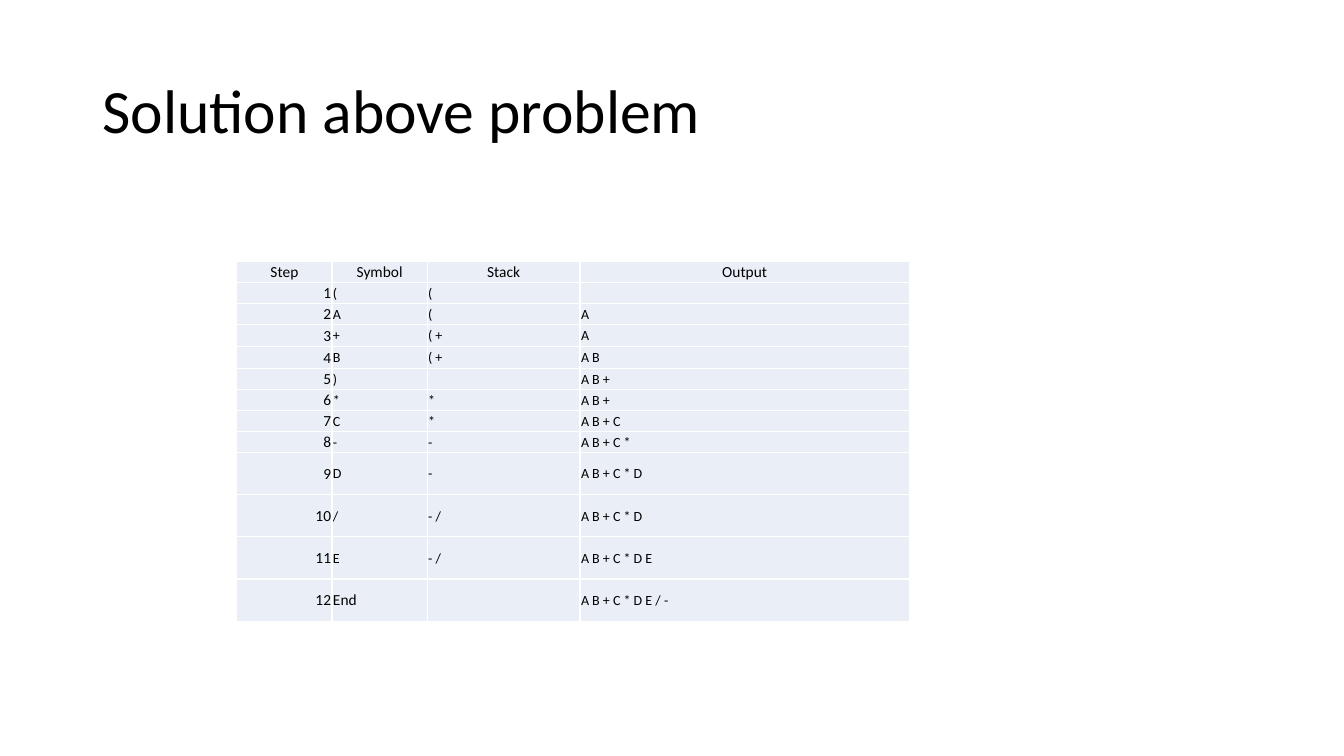
from typing import NamedTuple

from lxml.etree import SubElement
from pptx import Presentation
from pptx.dml.color import RGBColor
from pptx.enum.text import MSO_ANCHOR, MSO_AUTO_SIZE, PP_ALIGN
from pptx.oxml.ns import qn
from pptx.slide import Slide
from pptx.table import _Cell
from pptx.text.text import _Paragraph
from pptx.util import Pt

BLACK = RGBColor(0x00, 0x00, 0x00)
WHITE = RGBColor(0xFF, 0xFF, 0xFF)
PALE_BLUE = RGBColor(0xEA, 0xEF, 0xF7)
FONT = "Calibri"
LABEL_SIZE = 11
TRACE_SIZE = 10


class Step(NamedTuple):
    symbol: str
    stack: str
    output: str


HEADINGS = ("Step", "Symbol", "Stack", "Output")
STEPS = (
    Step("(", "(", ""),
    Step("A", "(", "A"),
    Step("+", "( +", "A"),
    Step("B", "( +", "A B"),
    Step(")", "", "A B +"),
    Step("*", "*", "A B +"),
    Step("C", "*", "A B + C"),
    Step("-", "-", "A B + C *"),
    Step("D", "-", "A B + C * D"),
    Step("/", "- /", "A B + C * D"),
    Step("E", "- /", "A B + C * D E"),
    Step("End", "", "A B + C * D E / -"),
)
COLUMN_WIDTHS = (68, 68, 109.2, 235.2)
ROW_HEIGHTS = (15.05,) * 3 + (15.8,) * 2 + (15.05,) * 4 + (30.1,) * 4


def format_runs(paragraph: _Paragraph, size: float) -> None:
    for run in paragraph.runs:
        run.font.name = FONT
        run.font.size = Pt(size)
        run.font.color.rgb = BLACK


def add_borders(cell: _Cell) -> None:
    properties = cell._tc.get_or_add_tcPr()
    for side in ("a:lnL", "a:lnR", "a:lnT", "a:lnB"):
        line = SubElement(properties, qn(side), w=str(Pt(1)))
        fill = SubElement(line, qn("a:solidFill"))
        SubElement(fill, qn("a:srgbClr"), val=str(WHITE))


def fill_cell(cell: _Cell, text: str, size: float, alignment: PP_ALIGN) -> None:
    add_borders(cell)
    cell.fill.solid()
    cell.fill.fore_color.rgb = PALE_BLUE
    cell.vertical_anchor = MSO_ANCHOR.MIDDLE
    cell.margin_left = cell.margin_right = cell.margin_top = Pt(0.7)
    cell.margin_bottom = Pt(0)
    paragraph = cell.text_frame.paragraphs[0]
    paragraph.alignment = alignment
    if text:
        paragraph.text = text
        format_runs(paragraph, size)
    else:
        # An empty cell would otherwise stretch its row to the default text size.
        SubElement(paragraph._p, qn("a:endParaRPr"), sz=str(size * 100))


def add_title(slide: Slide, text: str) -> None:
    title = slide.shapes.title
    title.left, title.top, title.width, title.height = Pt(66), Pt(28.8), Pt(828), Pt(104.4)
    frame = title.text_frame
    frame.text = text
    frame.word_wrap = True
    frame.auto_size = MSO_AUTO_SIZE.NONE
    frame.vertical_anchor = MSO_ANCHOR.MIDDLE
    paragraph = frame.paragraphs[0]
    paragraph.alignment = PP_ALIGN.LEFT
    paragraph.line_spacing = 0.9
    format_runs(paragraph, 44)


def add_trace_table(slide: Slide) -> None:
    table = slide.shapes.add_table(
        len(STEPS) + 1, len(HEADINGS), Pt(169.2), Pt(186.6),
        Pt(sum(COLUMN_WIDTHS)), Pt(sum(ROW_HEIGHTS)),
    ).table
    table.first_row = table.horz_banding = False
    for column, width in zip(table.columns, COLUMN_WIDTHS):
        column.width = Pt(width)
    for row, height in zip(table.rows, ROW_HEIGHTS):
        row.height = Pt(height)

    for column, heading in enumerate(HEADINGS):
        fill_cell(table.cell(0, column), heading, LABEL_SIZE, PP_ALIGN.CENTER)
    for number, step in enumerate(STEPS, start=1):
        fill_cell(table.cell(number, 0), str(number), LABEL_SIZE, PP_ALIGN.RIGHT)
        for column, entry in enumerate(step, start=1):
            size = LABEL_SIZE if entry == "End" else TRACE_SIZE
            fill_cell(table.cell(number, column), entry, size, PP_ALIGN.LEFT)


def main() -> None:
    presentation = Presentation()
    presentation.slide_width, presentation.slide_height = Pt(960), Pt(540)
    slide = presentation.slides.add_slide(presentation.slide_layouts.get_by_name("Title Only"))
    add_title(slide, "Solution above problem")
    add_trace_table(slide)
    presentation.save("out.pptx")


if __name__ == "__main__":
    main()
